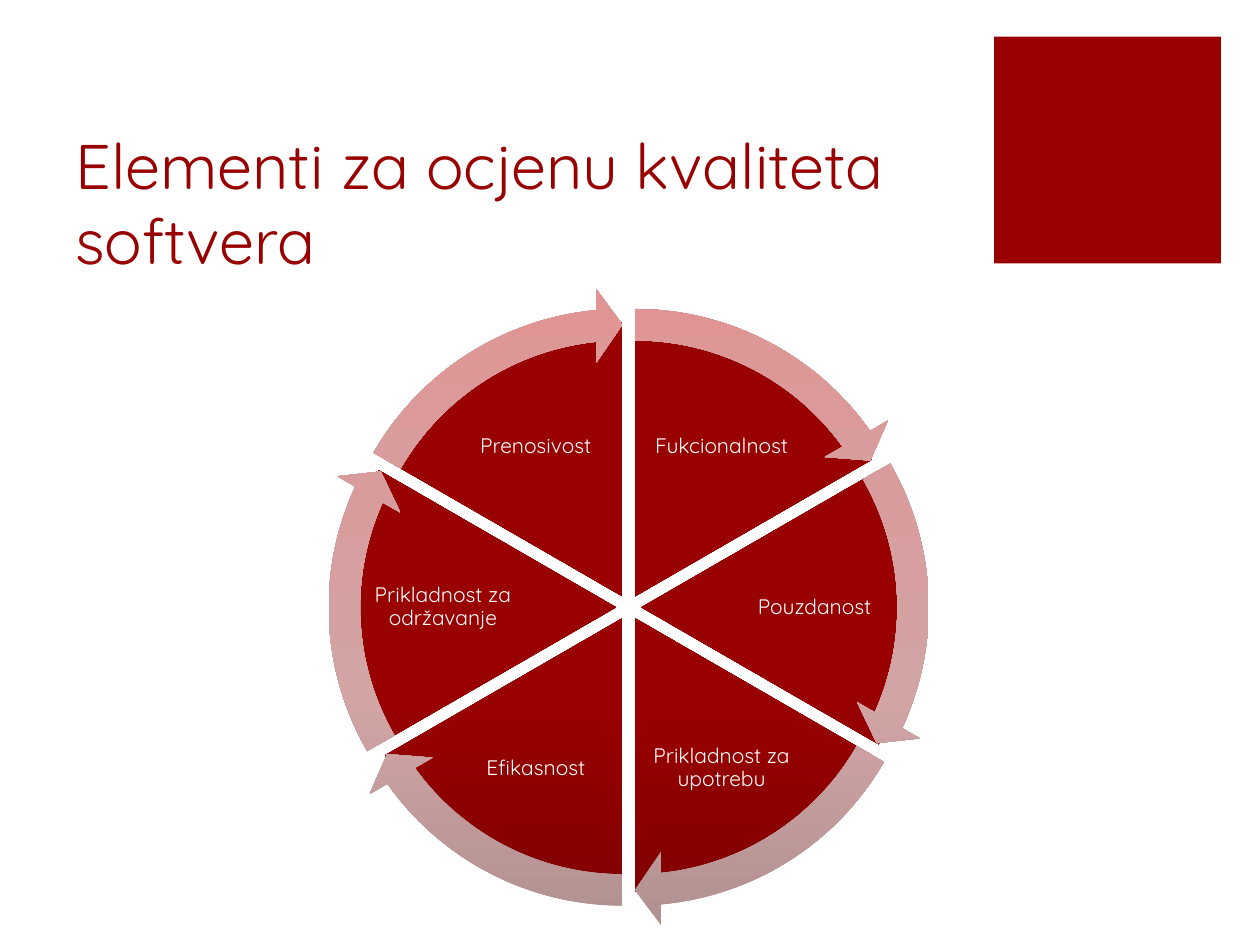
import copy
import math

import pptx
import pptx.dml.color
import pptx.enum.shapes
import pptx.enum.text
import pptx.oxml.ns
import pptx.util

Inches = pptx.util.Inches
RGB = pptx.dml.color.RGBColor
SHAPE = pptx.enum.shapes.MSO_SHAPE
ALIGN = pptx.enum.text.PP_ALIGN
ANCHOR = pptx.enum.text.MSO_ANCHOR

RED = RGB(0x99, 0x00, 0x00)
DARK = RGB(0x83, 0x00, 0x00)
WHITE = RGB(0xFF, 0xFF, 0xFF)
ROSE = [RGB(0xB0, 0x90, 0x90), RGB(0xD2, 0xA4, 0xA4),
        RGB(0xD9, 0x9C, 0x9C), RGB(0xE1, 0x94, 0x94)]
DEEP = [DARK, RED, RED, RED]
STOPS = [0, 0.35, 0.7, 1]

# Wheel geometry; angles in 60000ths of a degree / 100000
MID = (4.99, 4.82)
GAP = 0.1
REACH = 1.475
TURN = 216
STEP = 36
LABELS = ["Fukcionalnost", "Pouzdanost", "Prikladnost za upotrebu",
          "Efikasnost", "Prikladnost za održavanje", "Prenosivost"]


class Deck:
    font = "Quicksand"

    def __init__(self):
        self.prs = pptx.Presentation()
        self.prs.slide_width = Inches(10)
        self.prs.slide_height = Inches(7.5)
        self.slide = self.prs.slides.add_slide(self.prs.slide_layouts[6])

    def shape(self, kind, box, fill, adjust=()):
        """Add a preset shape; a list of colours makes a gradient."""
        item = self.slide.shapes.add_shape(kind, *map(Inches, box))
        item.shadow.inherit = False
        item.line.fill.background()
        for i, value in enumerate(adjust):
            item.adjustments[i] = value
        if isinstance(fill, list):
            self.blend(item, fill)
        else:
            item.fill.solid()
            item.fill.fore_color.rgb = fill

    def blend(self, item, colors):
        item.fill.gradient()
        item.fill.gradient_angle = 90
        stops = next(item._element.spPr.iter(pptx.oxml.ns.qn("a:gsLst")))
        while len(stops) < len(colors):
            stops.append(copy.deepcopy(stops[0]))
        for stop, place, color in zip(item.fill.gradient_stops, STOPS, colors):
            stop.position = place
            stop.color.rgb = color

    def text(self, words, box, size, color, frame, para):
        item = self.slide.shapes.add_textbox(*map(Inches, box))
        body = item.text_frame
        line = body.paragraphs[0]
        line.text = words
        font = {"name": self.font, "size": pptx.util.Pt(size)}
        for part, values in ((body, {"word_wrap": True, **frame}),
                             (line, para), (line.runs[0].font, font)):
            for name, value in values.items():
                setattr(part, name, value)
        line.runs[0].font.color.rgb = color


def around(angle, reach):
    """Point at a distance from the middle of the wheel."""
    turn = math.radians(angle)
    return MID[0] + reach * math.cos(turn), MID[1] + reach * math.sin(turn)


def square(angle, side):
    x, y = around(angle, GAP)
    return x - side / 2, y - side / 2, side, side


def main():
    deck = Deck()

    # Corner block and title
    deck.shape(SHAPE.RECTANGLE, (7.89, 0.29, 1.8, 1.8), RED)
    deck.text("Elementi za ocjenu kvaliteta softvera", (0.5, 1, 7.12, 1.25),
              36, RED, {"vertical_anchor": ANCHOR.BOTTOM}, {})

    # Slices start at the top and run clockwise
    wheel = [(300 + 60 * i, (162 + STEP * i) % TURN) for i in range(len(LABELS))]
    pad = Inches(0.02)
    frame = {"vertical_anchor": ANCHOR.MIDDLE, "margin_left": pad,
             "margin_right": pad, "margin_top": pad, "margin_bottom": pad}
    para = {"alignment": ALIGN.CENTER, "line_spacing": 0.9}
    for words, (angle, start) in zip(LABELS, wheel):
        deck.shape(SHAPE.PIE, square(angle, 4.35), DEEP,
                   (start, (start + STEP) % TURN))
        x, y = around(angle, REACH)
        wide, high = (1.19, 0.85) if angle % 180 == 0 else (1.14, 0.88)
        deck.text(words, (x - wide / 2, y - high / 2, wide, high),
                  12, WHITE, frame, para)

    # Arrows round the rim
    for angle, start in wheel:
        tip = (start + 32.725) % TURN
        deck.shape(SHAPE.CIRCULAR_ARROW, square(angle, 4.89), ROSE,
                   (0.051, 3.275, tip, start, 0.059))

    deck.prs.save("out.pptx")


if __name__ == "__main__":
    main()
